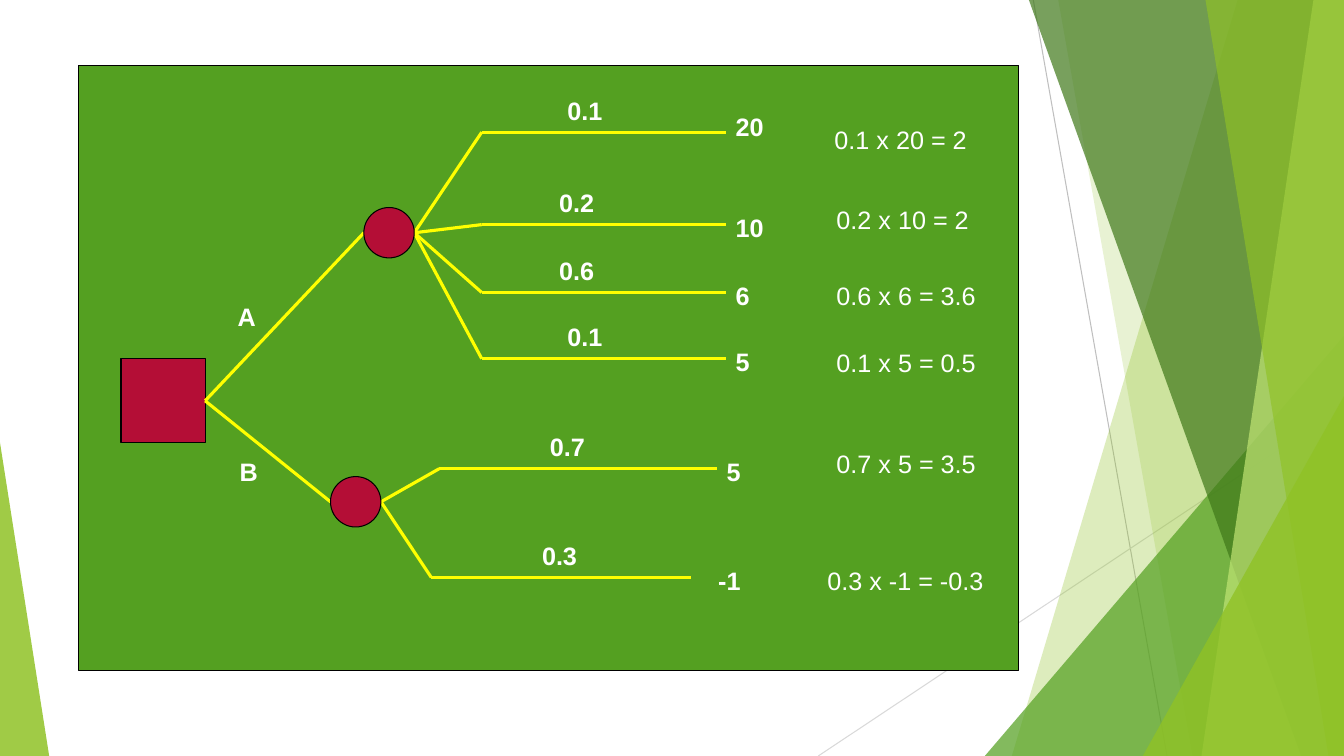
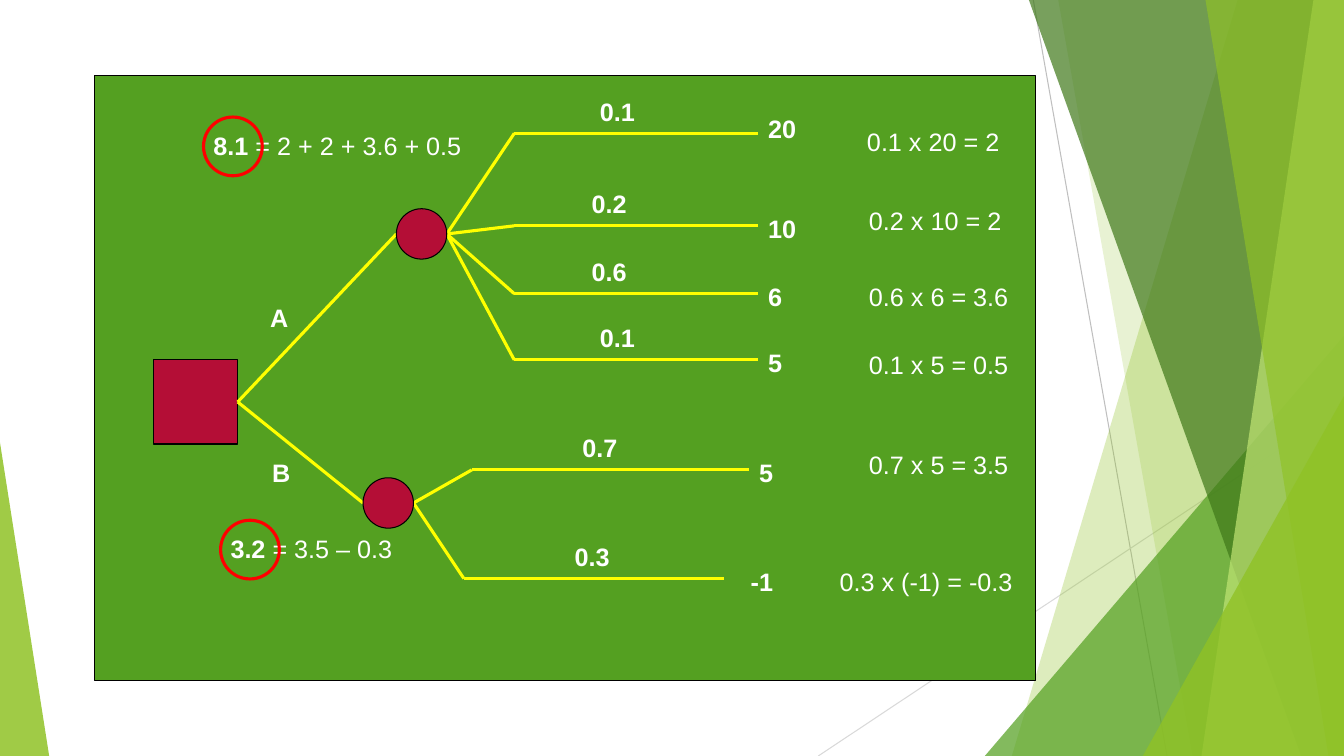
from dataclasses import dataclass
from typing import Optional

from pptx import Presentation
from pptx.dml.color import RGBColor
from pptx.enum.shapes import MSO_CONNECTOR, MSO_SHAPE
from pptx.oxml.ns import qn
from pptx.oxml.xmlchemy import OxmlElement
from pptx.shapes.autoshape import Shape
from pptx.slide import Slide
from pptx.util import Cm, Pt

LINE = MSO_CONNECTOR.STRAIGHT
RECT = MSO_SHAPE.RECTANGLE
OVAL = MSO_SHAPE.OVAL
WEDGE = MSO_SHAPE.ISOSCELES_TRIANGLE

WIDE, HIGH = 33.87, 19.05
FONT, SIZE = "Arial", 18
COLOR = {
    "lime": "90C226", "green": "54A021", "dark": "3F7819", "pale": "C0E474",
    "gray": "BFBFBF", "light": "D9D9D9", "black": "000000", "white": "FFFFFF",
    "crimson": "B40E36", "yellow": "FFFF00", "red": "FF0000",
}
BOX, DOT, RING = 2.12, 1.27, 1.48


@dataclass
class Band:
    """Slanted strip that runs to the right edge of the slide."""
    top: float
    foot: float
    color: str
    alpha: int


@dataclass
class Corner:
    """Right-angled wedge that stands on the bottom edge."""
    left: float
    top: float
    wide: float
    tip: float
    color: str
    alpha: int


@dataclass
class Payoff:
    text: str
    x: float
    y: float
    wide: float = 4.1


@dataclass
class Branch:
    chance: str
    value: str
    bend: float
    y: float
    end: float
    label: float
    payoff: Payoff
    gap: float = 0
    rise: float = 0.43


@dataclass
class Node:
    name: str
    x: float
    y: float
    label: tuple[float, float]
    fan: list[Branch]


@dataclass
class Total:
    value: str
    terms: str
    x: float
    y: float
    wide: float


# Backdrop, from back to front
DECOR = [
    Band(31.19, 25.5, "lime", 30),
    Band(26.67, 30.05, "lime", 20),
    Corner(24.82, 8.46, 9.05, 1, "green", 72),
    Band(25.93, 32.79, "dark", 70),
    Band(33.1, 30.28, "pale", 70),
    Band(30.38, 33.48, "lime", 65),
    Corner(28.8, 9.98, 5.07, 1, "lime", 80),
    Corner(0, 11.15, 1.24, 0, "lime", 85),
]

# Decision tree
ROOT = (3.05, 9.04)
TREE = [
    Node("A", 9.17, 5.23, (5.74, 7.47), [
        Branch("0.1", "20", 12.14, 3.33, 18.29, 14.05,
               Payoff("0.1 x 20 = 2", 20.78, 3.02), rise=0.64),
        Branch("0.2", "10", 12.14, 5.66, 18.29, 13.84,
               Payoff("0.2 x 10 = 2", 20.83, 5.03)),
        Branch("0.6", "6", 12.14, 7.37, 18.29, 13.84,
               Payoff("0.6 x 6 = 3.6", 20.83, 6.93)),
        Branch("0.1", "5", 12.14, 9.04, 18.29, 14.05,
               Payoff("0.1 x 5 = 0.5", 20.83, 8.64)),
    ]),
    Node("B", 8.33, 12.01, (5.79, 11.38), [
        Branch("0.7", "5", 11.07, 11.81, 18.06, 13.61,
               Payoff("0.7 x 5 = 3.5", 20.83, 11.18)),
        Branch("0.3", "-1", 10.87, 14.55, 17.42, 13.41,
               Payoff("0.3 x -1 = -0.3", 20.6, 14.12, 4.6), gap=0.43),
    ]),
]
CLEAR = Payoff("0.3 x (-1) = -0.3", 20.09, 14.12, 5)
TOTALS = [
    Total("8.1", " = 2 + 2 + 3.6 + 0.5", 5.13, 3.15, 6.9),
    Total("3.2", " = 3.5 – 0.3", 5.56, 13.31, 4.7),
]


def rgb(name: str) -> RGBColor:
    return RGBColor.from_string(COLOR[name])


def paint(shape: Shape, fill: Optional[str], line: Optional[str] = None,
          width: float = 0.75, alpha: int = 100) -> None:
    shape.shadow.inherit = False
    if fill:
        shape.fill.solid()
        shape.fill.fore_color.rgb = rgb(fill)
    else:
        shape.fill.background()
    if line:
        shape.line.color.rgb = rgb(line)
        shape.line.width = Pt(width)
    else:
        shape.line.fill.background()
    if alpha < 100:
        tint = shape._element.spPr.find(qn("a:solidFill"))[0]
        mark = OxmlElement("a:alpha")
        mark.set("val", str(alpha * 1000))
        tint.append(mark)


def form(slide: Slide, kind: MSO_SHAPE, x: float, y: float,
         wide: float, high: float) -> Shape:
    return slide.shapes.add_shape(kind, Cm(x), Cm(y), Cm(wide), Cm(high))


def stroke(slide: Slide, start: tuple[float, float], end: tuple[float, float],
           color: str = "yellow", width: float = 2.25) -> None:
    line = slide.shapes.add_connector(
        LINE, Cm(start[0]), Cm(start[1]), Cm(end[0]), Cm(end[1]))
    line.line.color.rgb = rgb(color)
    line.line.width = Pt(width)
    line._element.spPr.append(OxmlElement("a:effectLst"))


def write(slide: Slide, x: float, y: float, wide: float,
          bold: str = "", plain: str = "") -> None:
    box = slide.shapes.add_textbox(Cm(x), Cm(y), Cm(wide), Cm(1.02))
    box.text_frame.word_wrap = True
    para = box.text_frame.paragraphs[0]
    for text, heavy in ((bold, True), (plain, False)):
        if text:
            run = para.add_run()
            run.text = text
            run.font.name = FONT
            run.font.size = Pt(SIZE)
            run.font.bold = heavy
            run.font.color.rgb = rgb("white")


def backdrop(slide: Slide) -> None:
    stroke(slide, (26.04, 0), (29.41, HIGH), "gray", 0.75)
    stroke(slide, (WIDE, 10.24), (20.62, HIGH), "light", 0.75)
    for part in DECOR:
        if isinstance(part, Band):
            pen = slide.shapes.build_freeform(Cm(part.top), 0)
            rest = [(WIDE, 0), (WIDE, HIGH), (part.foot, HIGH)]
            pen.add_line_segments([(Cm(x), Cm(y)) for x, y in rest])
            shape = pen.convert_to_shape()
        else:
            shape = form(slide, WEDGE, part.left, part.top,
                         part.wide, HIGH - part.top)
            shape.adjustments[0] = part.tip
        paint(shape, part.color, alpha=part.alpha)


def branch(slide: Slide, item: Branch, hub: tuple[float, float],
           dx: float, dy: float, payoff: Payoff) -> None:
    y = item.y + dy
    bend, end = (item.bend + dx, y), (item.end + dx, y)
    stroke(slide, hub, bend)
    stroke(slide, bend, end)
    write(slide, item.label + dx, y - 1.06, 1.5, bold=item.chance)
    write(slide, end[0] + item.gap, y - item.rise, 1.27, bold=item.value)
    write(slide, payoff.x + dx, payoff.y + dy, payoff.wide, plain=payoff.text)


def tree(slide: Slide, panel: tuple[float, float], dx: float = 0,
         dy: float = 0, last: Optional[Payoff] = None) -> None:
    paint(form(slide, RECT, *panel, 23.7, 15.24), "green", "black")
    x, y = ROOT[0] + dx, ROOT[1] + dy
    paint(form(slide, RECT, x, y, BOX, BOX), "crimson", "black")
    start = (x + BOX, y + BOX / 2)
    for node in TREE:
        left, top = node.x + dx, node.y + dy
        mid = top + DOT / 2
        stroke(slide, start, (left, mid))
        for item in node.fan:
            swap = last if last and item is TREE[-1].fan[-1] else item.payoff
            branch(slide, item, (left + DOT, mid), dx, dy, swap)
        paint(form(slide, OVAL, left, top, DOT, DOT), "crimson", "black")
        write(slide, node.label[0] + dx, node.label[1] + dy, 1.1,
              bold=node.name)


def main() -> None:
    deck = Presentation()
    deck.slide_width, deck.slide_height = Cm(WIDE), Cm(HIGH)
    blank = deck.slide_layouts[6]

    # Tree with weighted payoffs
    first = deck.slides.add_slide(blank)
    backdrop(first)
    tree(first, (1.98, 1.65))

    # Tree with expected values
    second = deck.slides.add_slide(blank)
    backdrop(second)
    tree(second, (2.39, 1.9), 0.82, 0.03, CLEAR)
    for sum_ in TOTALS:
        write(second, sum_.x, sum_.y, sum_.wide, sum_.value, sum_.terms)
        ring = form(second, OVAL, sum_.x, sum_.y - 0.2, RING, RING)
        paint(ring, None, "red", 2.25)

    deck.save("out.pptx")


if __name__ == "__main__":
    main()
